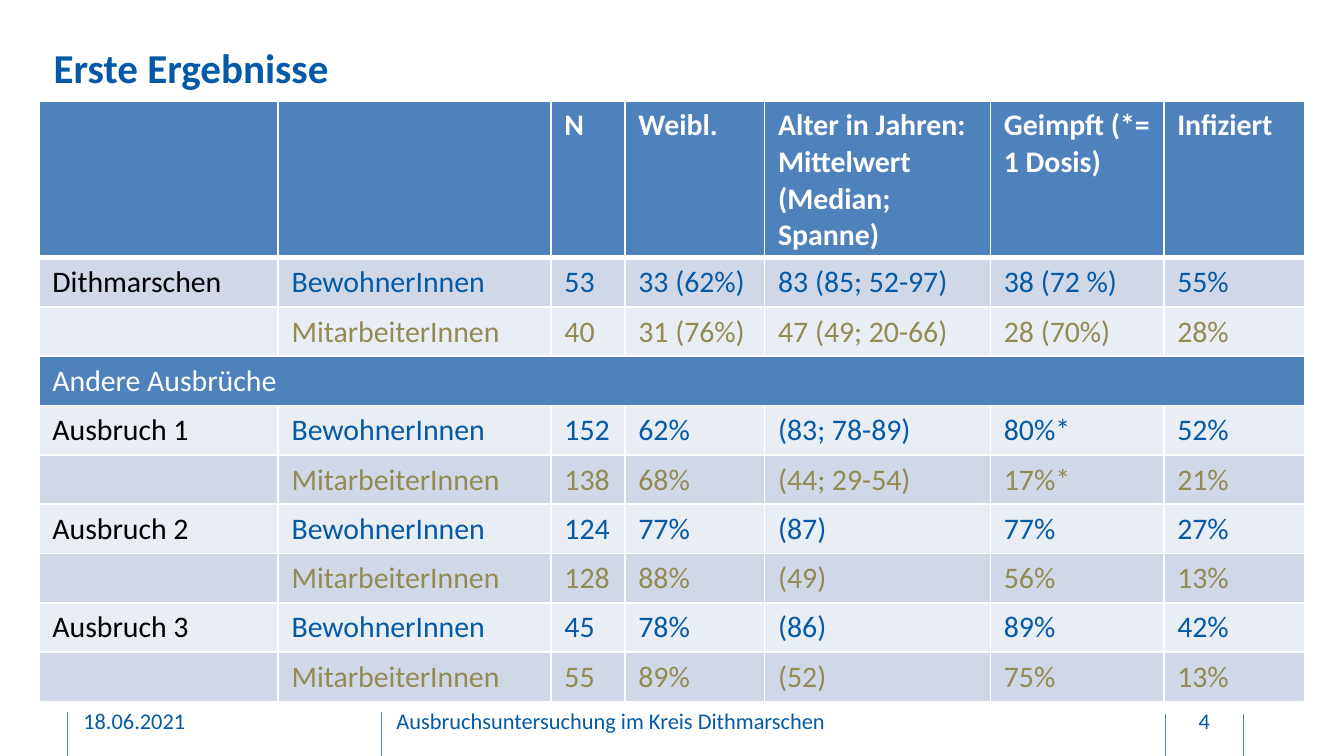
from dataclasses import dataclass

from lxml.etree import SubElement
from pptx import Presentation
from pptx.dml.color import RGBColor
from pptx.enum.shapes import MSO_CONNECTOR
from pptx.enum.text import MSO_ANCHOR, PP_ALIGN
from pptx.oxml import parse_xml
from pptx.oxml.ns import nsdecls, qn
from pptx.util import Inches, Pt

FONT = "Calibri"
BLUE, OLIVE, BLACK, WHITE = "045AA6", "948A54", "000000", "FFFFFF"
ACCENT, BAND_DARK, BAND_LIGHT = "4F81BD", "D0D8E8", "E9EDF4"


@dataclass
class Label:
    text: str
    left: float
    top: float
    width: float
    height: float
    size: int = 12
    bold: bool = False
    align: PP_ALIGN = PP_ALIGN.LEFT
    inset: float = 0.05


@dataclass
class Divider:
    x: float
    top: float
    bottom: float


@dataclass
class Row:
    texts: list[str]
    fill: str
    colors: list[str]
    bold: bool = False


LABELS = [
    Label("18.06.2021", 0.62, 5.21, 2.03, 0.3),
    Label("Ausbruchsuntersuchung im Kreis Dithmarschen", 2.95, 5.21, 3.63, 0.3),
    Label("4", 8.69, 5.21, 0.54, 0.3, align=PP_ALIGN.CENTER),
    Label("Erste Ergebnisse", 0.4, 0.25, 8.73, 0.5, size=22, bold=True, inset=0),
]
DIVIDERS = [
    Divider(8.67, 5.31, 5.65),
    Divider(2.84, 5.3, 5.64),
    Divider(0.5, 5.3, 5.63),
    Divider(9.25, 5.31, 5.65),
]
COLUMN_WIDTHS = [1.78, 2.03, 0.55, 1.04, 1.68, 1.29, 1.05]
HEADER_HEIGHT, ROW_HEIGHT, TABLE_HEIGHT = 0.93, 0.31, 4.47
HEADINGS = ["", "", "N", "Weibl.", "Alter in Jahren: Mittelwert (Median; Spanne)",
            "Geimpft (*= 1 Dosis)", "Infiziert"]
SECTION = "Andere Ausbrüche"
# Each outbreak: residents first, then staff
OUTBREAKS = {
    "Dithmarschen": (["53", "33 (62%)", "83 (85; 52-97)", "38 (72 %)", "55%"],
                     ["40", "31 (76%)", "47 (49; 20-66)", "28 (70%)", "28%"]),
    "Ausbruch 1": (["152", "62%", "(83; 78-89)", "80%*", "52%"],
                   ["138", "68%", "(44; 29-54)", "17%*", "21%"]),
    "Ausbruch 2": (["124", "77%", "(87)", "77%", "27%"],
                   ["128", "88%", "(49)", "56%", "13%"]),
    "Ausbruch 3": (["45", "78%", "(86)", "89%", "42%"],
                   ["55", "89%", "(52)", "75%", "13%"]),
}


def rgb(color: str) -> RGBColor:
    return RGBColor.from_string(color)


def write(frame, text: str, *, size: int, color: str, bold: bool = False,
          align: PP_ALIGN = PP_ALIGN.LEFT) -> None:
    paragraph = frame.paragraphs[0]
    paragraph.alignment = align
    if not text:
        # An empty cell keeps the row height of its text size
        SubElement(paragraph._p, qn("a:endParaRPr"), sz=str(size * 100))
        return
    run = paragraph.add_run()
    run.text = text
    run.font.name = FONT
    run.font.size = Pt(size)
    run.font.bold = bold
    run.font.color.rgb = rgb(color)


def draw_label(slide, label: Label) -> None:
    box = slide.shapes.add_textbox(Inches(label.left), Inches(label.top),
                                   Inches(label.width), Inches(label.height))
    frame = box.text_frame
    frame.word_wrap = True
    frame.vertical_anchor = MSO_ANCHOR.MIDDLE
    frame.margin_left = frame.margin_right = 0
    frame.margin_top = frame.margin_bottom = Inches(label.inset)
    write(frame, label.text, size=label.size, color=BLUE, bold=label.bold,
          align=label.align)


def draw_divider(slide, divider: Divider) -> None:
    line = slide.shapes.add_connector(
        MSO_CONNECTOR.STRAIGHT, Inches(divider.x), Inches(divider.top),
        Inches(divider.x), Inches(divider.bottom))
    line.line.color.rgb = rgb(ACCENT)
    line.line.width = Pt(0.5)
    SubElement(line._element.spPr, qn("a:effectLst"))


def set_borders(cell, top: int, bottom: int) -> None:
    widths = {"lnL": 1, "lnR": 1, "lnT": top, "lnB": bottom}
    properties = cell._tc.get_or_add_tcPr()
    for position, (side, width) in enumerate(widths.items()):
        properties.insert(position, parse_xml(
            f'<a:{side} {nsdecls("a")} w="{Pt(width)}"><a:solidFill>'
            f'<a:srgbClr val="{WHITE}"/></a:solidFill></a:{side}>'))


def result_rows() -> list[Row]:
    columns = len(HEADINGS)
    rows = [Row(HEADINGS, ACCENT, [WHITE] * columns, bold=True)]
    for place, (residents, staff) in OUTBREAKS.items():
        for name, group, values, color in (
                (place, "BewohnerInnen", residents, BLUE),
                ("", "MitarbeiterInnen", staff, OLIVE)):
            band = BAND_DARK if len(rows) % 2 else BAND_LIGHT
            rows.append(Row([name, group, *values], band,
                            [BLACK] + [color] * (columns - 1)))
        if place == "Dithmarschen":
            rows.append(Row([SECTION] + [""] * (columns - 1), ACCENT,
                            [WHITE] * columns))
    return rows


def draw_results(slide, rows: list[Row]) -> None:
    heights = [HEADER_HEIGHT] + [ROW_HEIGHT] * (len(rows) - 1)
    results = slide.shapes.add_table(
        len(rows), len(COLUMN_WIDTHS), Inches(0.29), Inches(0.75),
        Inches(sum(COLUMN_WIDTHS)), Inches(TABLE_HEIGHT))
    table = results.table
    for column, width in zip(table.columns, COLUMN_WIDTHS):
        column.width = Inches(width)
    for index, (row, height) in enumerate(zip(rows, heights)):
        table.rows[index].height = Inches(height)
        for cell, text, color in zip(table.rows[index].cells, row.texts, row.colors):
            cell.fill.solid()
            cell.fill.fore_color.rgb = rgb(row.fill)
            set_borders(cell, top=3 if index == 1 else 1,
                        bottom=3 if index == 0 else 1)
            write(cell.text_frame, text, size=16, color=color, bold=row.bold)
        if row.texts[0] == SECTION:
            table.cell(index, 0).merge(table.cell(index, len(COLUMN_WIDTHS) - 1))
    # The frame is taller than its rows, which stretch to fill it
    results.height = Inches(TABLE_HEIGHT)


def main() -> None:
    presentation = Presentation()
    presentation.slide_width = Inches(10)
    presentation.slide_height = Inches(10 * 9 / 16)
    slide = presentation.slides.add_slide(presentation.slide_layouts[6])

    # Footer dividers, footer texts and title
    for divider in DIVIDERS:
        draw_divider(slide, divider)
    for label in LABELS:
        draw_label(slide, label)

    # Results by outbreak
    draw_results(slide, result_rows())
    presentation.save("out.pptx")


if __name__ == "__main__":
    main()
